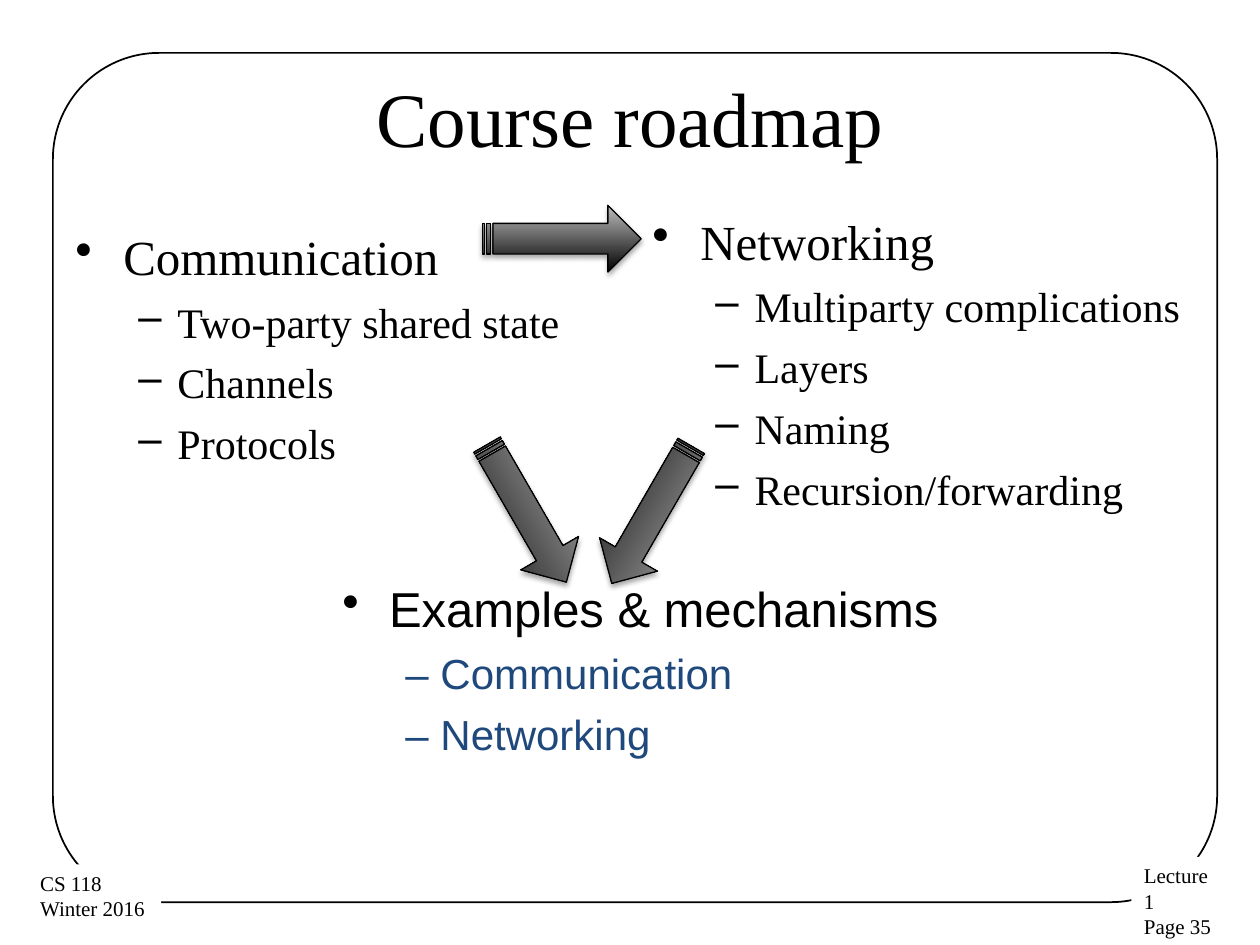
from dataclasses import dataclass

from lxml import etree
from pptx import Presentation
from pptx.dml.color import RGBColor
from pptx.enum.shapes import MSO_SHAPE
from pptx.enum.text import MSO_ANCHOR, MSO_AUTO_SIZE, PP_ALIGN
from pptx.oxml import parse_xml
from pptx.oxml.ns import qn
from pptx.util import Inches, Pt

ROUND_RECT = MSO_SHAPE.ROUNDED_RECTANGLE
STRIPED_ARROW = MSO_SHAPE.STRIPED_RIGHT_ARROW
CENTER = PP_ALIGN.CENTER
MIDDLE = MSO_ANCHOR.MIDDLE
GROW = MSO_AUTO_SIZE.SHAPE_TO_FIT_TEXT
TITLE_ONLY = 5
SHADOW = (
    '<a:effectLst xmlns:a="http://schemas.openxmlformats.org/drawingml/2006/main">'
    '<a:outerShdw blurRad="{}" dist="{}" dir="5400000" rotWithShape="0">'
    '<a:srgbClr val="000000"><a:alpha val="35000"/></a:srgbClr>'
    '</a:outerShdw></a:effectLst>'
)


@dataclass(frozen=True)
class Theme:
    ink: RGBColor = RGBColor(0, 0, 0)
    paper: RGBColor = RGBColor(255, 255, 255)
    accent: RGBColor = RGBColor(0x1F, 0x49, 0x7D)
    sheen: RGBColor = RGBColor(0xBD, 0xBD, 0xBD)
    serif: str = "Times New Roman"
    sans: str = "Arial"
    title: int = 44
    heading: int = 28
    item: int = 24
    footer: int = 12
    gap: int = 6


T = Theme()


def write(p, text, size, font=T.serif, color=T.ink):
    r = p.add_run()
    r.text = text
    r.font.size = Pt(size)
    r.font.name = font
    r.font.color.rgb = color


def next_paragraph(tf, i):
    return tf.add_paragraph() if i else tf.paragraphs[0]


def indent(p, left, hanging=0, bullet=None):
    pPr = p._p.get_or_add_pPr()
    pPr.set("marL", str(Inches(left)))
    pPr.set("indent", str(-Inches(hanging)))
    if bullet:
        etree.SubElement(pPr, qn("a:buChar")).set("char", bullet)


def add_title(s, text):
    sp = s.shapes.title
    sp.left, sp.top, sp.width, sp.height = map(Inches, (0.5, 0.3, 9, 1.25))
    tf = sp.text_frame
    tf.vertical_anchor = MIDDLE
    p = tf.paragraphs[0]
    p.alignment = CENTER
    write(p, text, T.title)


def add_frame(s, box):
    sp = s.shapes.add_shape(ROUND_RECT, *map(Inches, box))
    sp.shadow.inherit = False
    sp.adjustments[0] = 0.125
    sp.fill.background()
    sp.line.color.rgb = T.ink
    sp.line.width = Pt(1)


def add_footer(s, box, lines):
    sp = s.shapes.add_textbox(*map(Inches, box))
    sp.fill.solid()
    sp.fill.fore_color.rgb = T.paper
    tf = sp.text_frame
    tf.word_wrap = True
    tf.auto_size = GROW
    for i, text in enumerate(lines):
        write(next_paragraph(tf, i), text, T.footer)


def add_outline(s, box, heading, items, font=T.serif, color=T.ink,
                head_indent=0.38, head_gap=T.gap, item_indent=(0.81, 0.31, "–")):
    tf = s.shapes.add_textbox(*map(Inches, box)).text_frame
    tf.word_wrap = True
    p = tf.paragraphs[0]
    p.space_before = Pt(head_gap)
    indent(p, head_indent, head_indent, "•")
    write(p, heading, T.heading, font)
    for text in items:
        p = tf.add_paragraph()
        p.level = 1
        p.space_before = Pt(T.gap)
        indent(p, *item_indent)
        write(p, text, T.item, font, color)


def add_arrow(s, left, top, rotation):
    sp = s.shapes.add_shape(STRIPED_ARROW, *map(Inches, (left, top, 1.26, 0.53)))
    sp.rotation = rotation
    sp.adjustments[0] = 0.458
    sp.adjustments[1] = 0.5
    sp.fill.gradient()
    sp.fill.gradient_angle = 90
    for stop, color in zip(sp.fill.gradient_stops, (T.ink, T.sheen)):
        stop.color.rgb = color
    sp.line.color.rgb = T.ink
    sp.line.width = Pt(0.75)
    sp._element.spPr.append(parse_xml(SHADOW.format(Pt(3.1), Pt(1.8))))


def main():
    prs = Presentation()
    prs.slide_width, prs.slide_height = Inches(10), Inches(7.5)
    s = prs.slides.add_slide(prs.slide_layouts[TITLE_ONLY])

    add_frame(s, (0.42, 0.42, 9.24, 6.74))
    add_footer(s, (8.98, 6.8, 0.82, 0.7), ["Lecture 1", "Page 35"])
    add_footer(s, (0.22, 6.86, 1.06, 0.51), ["CS 118", "Winter 2016"])
    add_title(s, "Course roadmap")

    add_outline(s, (0.5, 1.75, 4.42, 4.95), "Communication",
                ["Two-party shared state", "Channels", "Protocols"])
    add_outline(s, (5.08, 1.63, 4.71, 4.69), "Networking",
                ["Multiparty complications", "Layers", "Naming", "Recursion/forwarding"])
    add_outline(s, (2.62, 4.54, 5.16, 1.55), "Examples & mechanisms",
                ["– Communication", "– Networking"], font=T.sans, color=T.accent,
                head_indent=0.37, head_gap=0, item_indent=(0.5,))

    for left, top, rotation in ((3.83, 1.63, 0), (3.55, 3.81, 60), (4.54, 3.82, 120)):
        add_arrow(s, left, top, rotation)

    prs.save("out.pptx")


if __name__ == "__main__":
    main()
